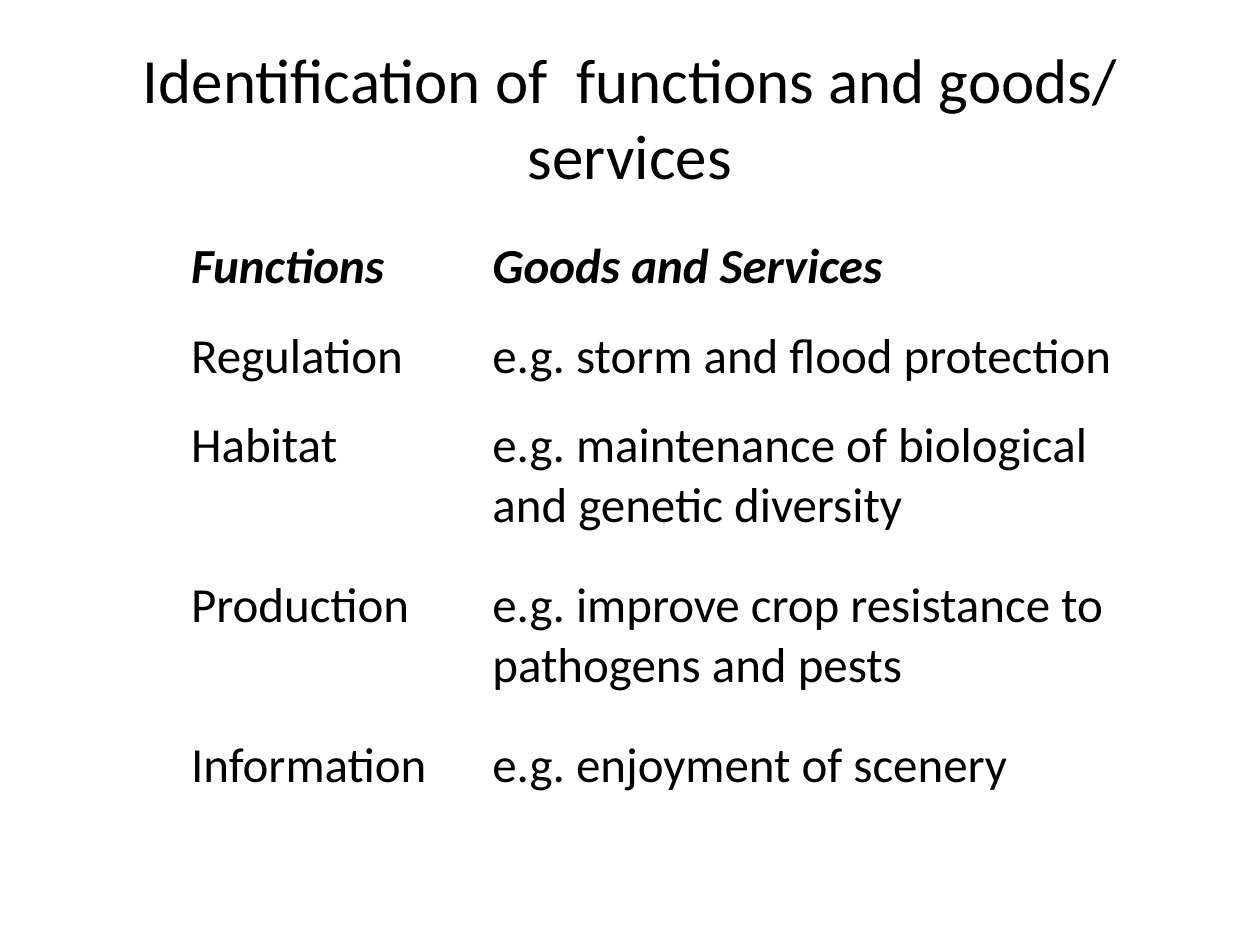
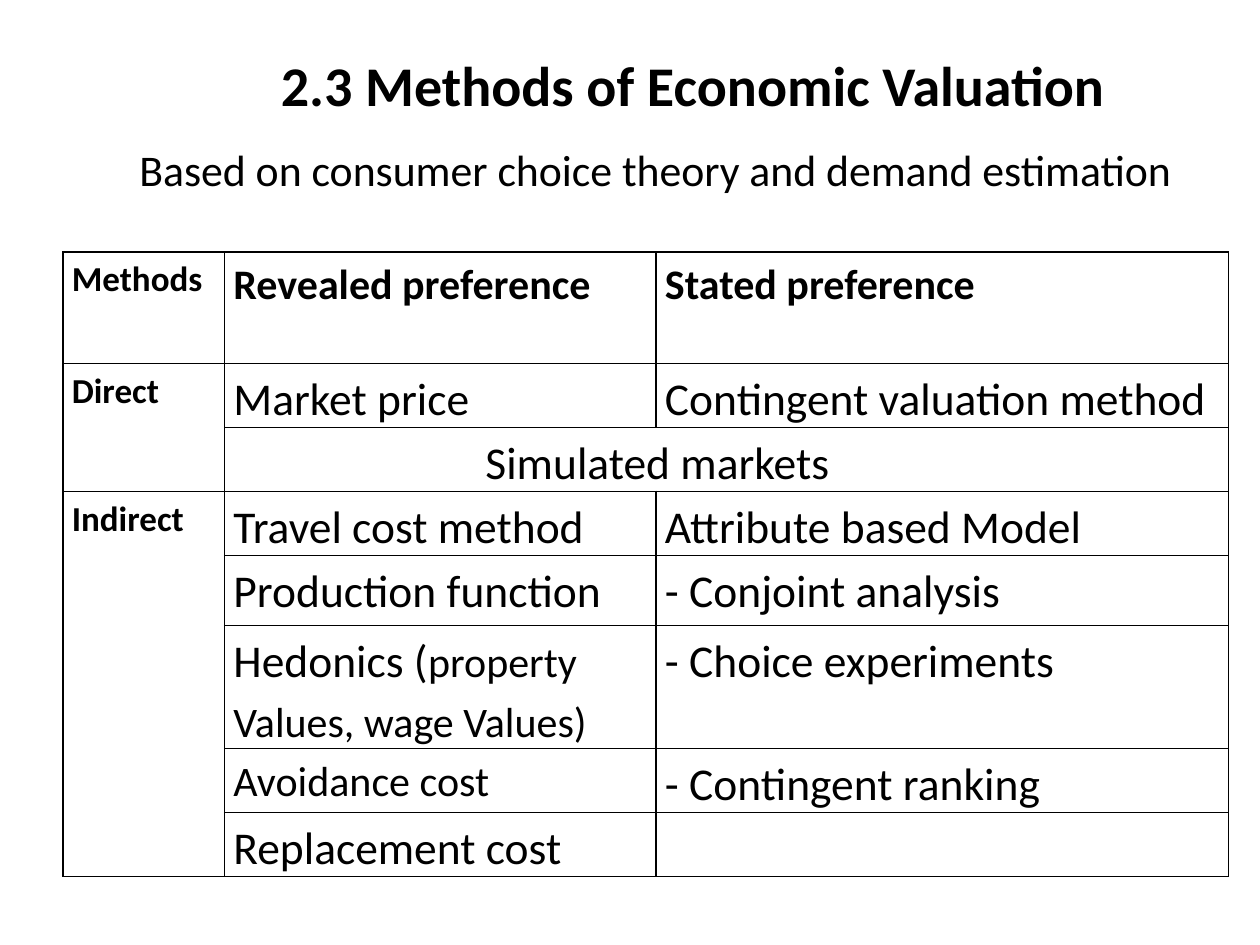
"""Build two slides on ecosystem functions and methods of economic valuation."""
from dataclasses import dataclass
from itertools import product

from lxml.etree import SubElement
from pptx import Presentation
from pptx.dml.color import RGBColor
from pptx.enum.text import MSO_ANCHOR, MSO_AUTO_SIZE, PP_ALIGN
from pptx.oxml.ns import qn
from pptx.util import Emu, Inches, Pt

BLACK = RGBColor(0x00, 0x00, 0x00)
FONT = "Calibri"
SLIDE_WIDTH, SLIDE_HEIGHT = Inches(10), Inches(7.5)
GRID_COLUMNS = 120
NO_STYLE_NO_GRID = "{2D5ABB26-0587-4C30-8999-92F81FD0307C}"


@dataclass(frozen=True)
class Box:
    """A rectangle in grid units."""
    left: float
    top: float
    width: float
    height: float


@dataclass(frozen=True)
class Run:
    """A piece of text in one format."""
    text: str
    size: float
    bold: bool = False
    italic: bool = False


@dataclass(frozen=True)
class TableStyle:
    """The look shared by all cells of a table."""
    side_margin: float
    top_margin: float
    line_spacing: float = 1.0
    border: float = 0


Paragraph = tuple[Run, ...]
CellText = tuple[Paragraph, ...]

PLAIN = TableStyle(side_margin=0.1, top_margin=0.05)
RULED = TableStyle(side_margin=0.07, top_margin=0, line_spacing=1.15, border=1)


def grid(units: float) -> Emu:
    """Turn grid units into a length."""
    return Emu(round(SLIDE_WIDTH * units / GRID_COLUMNS))


def cell_text(*lines: str, size: float, bold: bool = False, italic: bool = False) -> CellText:
    """Make one paragraph of one run from each line."""
    return tuple((Run(line, size, bold, italic),) for line in lines)


def write_runs(paragraph, runs: Paragraph) -> None:
    """Add formatted runs to a paragraph."""
    for item in runs:
        run = paragraph.add_run()
        run.text = item.text
        font = run.font
        font.name, font.size = FONT, Pt(item.size)
        font.bold, font.italic = item.bold, item.italic
        font.color.rgb = BLACK


def indent(paragraph, left: float) -> None:
    """Set a left indent in inches without a hanging first line."""
    properties = paragraph._p.get_or_add_pPr()
    properties.set("marL", str(Inches(left)))
    properties.set("indent", "0")


def fill_placeholder(shape, box: Box, run: Run):
    """Place a placeholder, write its text and return the paragraph."""
    shape.left, shape.top = grid(box.left), grid(box.top)
    shape.width, shape.height = grid(box.width), grid(box.height)
    frame = shape.text_frame
    frame.word_wrap = True
    frame.auto_size = MSO_AUTO_SIZE.NONE
    paragraph = frame.paragraphs[0]
    write_runs(paragraph, (run,))
    return paragraph


def add_title(slide, box: Box, run: Run) -> None:
    """Write a centred slide title."""
    paragraph = fill_placeholder(slide.shapes.title, box, run)
    paragraph.alignment = PP_ALIGN.CENTER
    slide.shapes.title.text_frame.vertical_anchor = MSO_ANCHOR.MIDDLE


def add_borders(cell, width: float) -> None:
    """Draw a solid line on all four sides of a cell."""
    properties = cell._tc.get_or_add_tcPr()
    for side in ("a:lnL", "a:lnR", "a:lnT", "a:lnB"):
        line = SubElement(properties, qn(side), w=str(Pt(width)))
        fill = SubElement(line, qn("a:solidFill"))
        SubElement(fill, qn("a:srgbClr"), val=str(BLACK))


def style_cell(cell, style: TableStyle) -> None:
    """Apply margins, borders and a clear fill to a cell."""
    cell.margin_left = cell.margin_right = Inches(style.side_margin)
    cell.margin_top = cell.margin_bottom = Inches(style.top_margin)
    if style.border:
        add_borders(cell, style.border)
    cell.fill.background()


def add_table(slide, left: float, top: float, widths: list[float], heights: list[float],
              texts: dict[tuple[int, int], CellText], style: TableStyle):
    """Add a table with texts keyed by row and column."""
    frame = slide.shapes.add_table(len(heights), len(widths), grid(left), grid(top),
                                   grid(sum(widths)), grid(sum(heights)))
    table = frame.table
    table.first_row = table.horz_banding = False
    table._tbl.tblPr.find(qn("a:tableStyleId")).text = NO_STYLE_NO_GRID
    for column, width in zip(table.columns, widths):
        column.width = grid(width)
    for row, height in zip(table.rows, heights):
        row.height = grid(height)
    for position in product(range(len(heights)), range(len(widths))):
        cell = table.cell(*position)
        style_cell(cell, style)
        frame = cell.text_frame
        for number, runs in enumerate(texts.get(position, ())):
            paragraph = frame.add_paragraph() if number else frame.paragraphs[0]
            paragraph.line_spacing = style.line_spacing
            write_runs(paragraph, runs)
    return table


def build_functions_slide(presentation) -> None:
    """Build the slide that pairs functions with goods and services."""
    slide = presentation.slides.add_slide(presentation.slide_layouts[5])
    add_title(slide, Box(6, 3.6, 108, 15), Run("Identification of  functions and goods/ services", 36))
    examples = {
        "Regulation": ["e.g. storm and flood protection"],
        "Habitat": ["e.g. maintenance of biological", "and genetic diversity"],
        "Production": ["e.g. improve crop resistance to", "pathogens and pests"],
        "Information": ["e.g. enjoyment of scenery"],
    }
    texts = {(0, column): cell_text(heading, size=28, bold=True, italic=True)
             for column, heading in enumerate(("Functions", "Goods and Services"))}
    for row, (function, lines) in enumerate(examples.items(), start=1):
        texts[row, 0] = cell_text(function, size=28)
        texts[row, 1] = cell_text(*lines, size=28)
    heights = [8.5] + [15.25 if len(lines) > 1 else 8.5 for lines in examples.values()]
    add_table(slide, 17, 22, [28.7, 64.3], heights, texts, PLAIN)


def build_methods_slide(presentation) -> None:
    """Build the slide that sorts the valuation methods."""
    slide = presentation.slides.add_slide(presentation.slide_layouts[1])
    add_title(slide, Box(17, 4, 98, 8), Run("2.3 Methods of Economic Valuation", 32, bold=True))
    subtitle = fill_placeholder(slide.placeholders[1], Box(11, 13, 104, 6),
                                Run("Based on consumer choice theory and demand estimation", 25))
    indent(subtitle, 0.09)
    SubElement(subtitle._p.get_or_add_pPr(), qn("a:buNone"))

    revealed = ["Market price", "Simulated markets", "Travel cost method", "Production function"]
    stated = {1: "Contingent valuation method", 3: "Attribute based Model", 4: "- Conjoint analysis",
              5: "- Choice experiments", 6: "- Contingent ranking"}
    texts = {(row, 0): cell_text(label, size=20, bold=True)
             for row, label in {0: "Methods", 1: "Direct", 3: "Indirect"}.items()}
    texts |= {(0, column): cell_text(f"{kind} preference", size=24, bold=True)
              for column, kind in enumerate(("Revealed", "Stated"), start=1)}
    texts |= {(row, 1): cell_text(method, size=26) for row, method in enumerate(revealed, start=1)}
    texts |= {(row, 2): cell_text(method, size=26) for row, method in stated.items()}
    texts[5, 1] = ((Run("Hedonics (", 26), Run("property Values, wage Values)", 24)),)
    texts[6, 1] = cell_text("Avoidance cost", size=24)
    texts[7, 1] = cell_text("Replacement cost", size=26)

    table = add_table(slide, 6, 24, [15.4, 41.1, 54.5], [10.6, 6, 6, 6, 6.7, 11.5, 6, 6], texts, RULED)
    for first, last in (((1, 0), (2, 0)), ((2, 1), (2, 2)), ((3, 0), (7, 0))):
        table.cell(*first).merge(table.cell(*last))
    indent(table.cell(2, 1).text_frame.paragraphs[0], 2)


def main() -> None:
    """Build and save the presentation."""
    presentation = Presentation()
    presentation.slide_width, presentation.slide_height = SLIDE_WIDTH, SLIDE_HEIGHT
    build_functions_slide(presentation)
    build_methods_slide(presentation)
    presentation.save("out.pptx")


if __name__ == "__main__":
    main()
